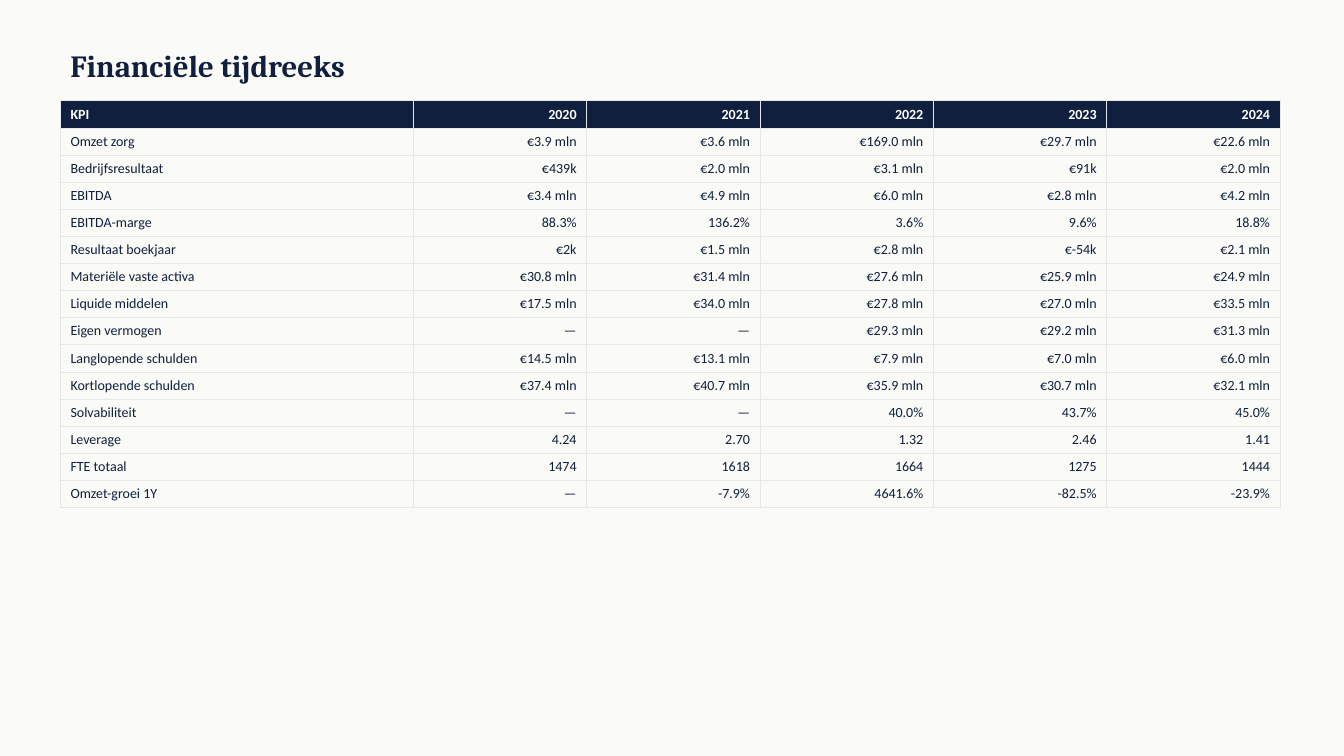
import dataclasses

import lxml.etree
import pptx
import pptx.dml.color
import pptx.enum.text
import pptx.oxml.ns
import pptx.util

Pt = pptx.util.Pt
ALIGN = pptx.enum.text.PP_ALIGN


@dataclasses.dataclass(frozen=True)
class Theme:
    paper: str = "FAFAF7"
    navy: str = "0F1F3D"
    white: str = "FFFFFF"
    rule: str = "E5E7EB"
    rule_width: float = 0.5
    title_font: str = "Cambria"
    title_size: float = 22
    table_font: str = "Calibri"
    table_size: float = 10


THEME = Theme()

KPI_ROWS = [
    ("KPI", "2020", "2021", "2022", "2023", "2024"),
    ("Omzet zorg", "€3.9 mln", "€3.6 mln", "€169.0 mln", "€29.7 mln", "€22.6 mln"),
    ("Bedrijfsresultaat", "€439k", "€2.0 mln", "€3.1 mln", "€91k", "€2.0 mln"),
    ("EBITDA", "€3.4 mln", "€4.9 mln", "€6.0 mln", "€2.8 mln", "€4.2 mln"),
    ("EBITDA-marge", "88.3%", "136.2%", "3.6%", "9.6%", "18.8%"),
    ("Resultaat boekjaar", "€2k", "€1.5 mln", "€2.8 mln", "€-54k", "€2.1 mln"),
    ("Materiële vaste activa", "€30.8 mln", "€31.4 mln", "€27.6 mln", "€25.9 mln", "€24.9 mln"),
    ("Liquide middelen", "€17.5 mln", "€34.0 mln", "€27.8 mln", "€27.0 mln", "€33.5 mln"),
    ("Eigen vermogen", "—", "—", "€29.3 mln", "€29.2 mln", "€31.3 mln"),
    ("Langlopende schulden", "€14.5 mln", "€13.1 mln", "€7.9 mln", "€7.0 mln", "€6.0 mln"),
    ("Kortlopende schulden", "€37.4 mln", "€40.7 mln", "€35.9 mln", "€30.7 mln", "€32.1 mln"),
    ("Solvabiliteit", "—", "—", "40.0%", "43.7%", "45.0%"),
    ("Leverage", "4.24", "2.70", "1.32", "2.46", "1.41"),
    ("FTE totaal", "1474", "1618", "1664", "1275", "1444"),
    ("Omzet-groei 1Y", "—", "-7.9%", "4641.6%", "-82.5%", "-23.9%"),
]


def rgb(value):
    return pptx.dml.color.RGBColor.from_string(value)


def add_span(para, text, font, size, color, bold):
    span = para.add_run()
    span.text = text
    span.font.name = font
    span.font.size = Pt(size)
    span.font.color.rgb = rgb(color)
    span.font.bold = bold


def add_borders(cell):
    qn = pptx.oxml.ns.qn
    properties = cell._tc.get_or_add_tcPr()
    for side in ("lnL", "lnR", "lnT", "lnB"):
        line = lxml.etree.SubElement(properties, qn(f"a:{side}"), w=str(Pt(THEME.rule_width)))
        fill = lxml.etree.SubElement(line, qn("a:solidFill"))
        lxml.etree.SubElement(fill, qn("a:srgbClr"), val=THEME.rule)


def add_title(slide, text, left, top, width, height):
    box = slide.shapes.add_textbox(Pt(left), Pt(top), Pt(width), Pt(height))
    frame = box.text_frame
    frame.word_wrap = True
    frame.vertical_anchor = pptx.enum.text.MSO_ANCHOR.MIDDLE
    add_span(frame.paragraphs[0], text, THEME.title_font, THEME.title_size, THEME.navy, True)


def fill_cell(cell, text, is_header, is_label):
    add_borders(cell)
    if is_header:
        cell.fill.solid()
        cell.fill.fore_color.rgb = rgb(THEME.navy)
    else:
        cell.fill.background()
    para = cell.text_frame.paragraphs[0]
    para.alignment = ALIGN.LEFT if is_label else ALIGN.RIGHT
    color = THEME.white if is_header else THEME.navy
    add_span(para, text, THEME.table_font, THEME.table_size, color, is_header)


def add_kpi_table(slide, rows, left, top, width, height, label_width):
    column_count = len(rows[0])
    year_width = (width - label_width) / (column_count - 1)
    table = slide.shapes.add_table(
        len(rows), column_count, Pt(left), Pt(top), Pt(width), Pt(height)
    ).table
    table.horz_banding = False
    for index, column in enumerate(table.columns):
        column.width = Pt(year_width if index else label_width)
    for row_index, values in enumerate(rows):
        for column_index, text in enumerate(values):
            cell = table.cell(row_index, column_index)
            fill_cell(cell, text, row_index == 0, column_index == 0)


def build_time_series_slide(deck):
    slide = deck.slides.add_slide(deck.slide_layouts[6])
    slide.background.fill.solid()
    slide.background.fill.fore_color.rgb = rgb(THEME.paper)
    add_title(slide, "Financiële tijdreeks", 43.2, 28.8, 864, 36)
    add_kpi_table(slide, KPI_ROWS, 43.2, 72, 871.2, 290.6, 252)


def main():
    deck = pptx.Presentation()
    deck.slide_width = Pt(960)
    deck.slide_height = Pt(540)
    build_time_series_slide(deck)
    deck.save("out.pptx")


if __name__ == "__main__":
    main()
